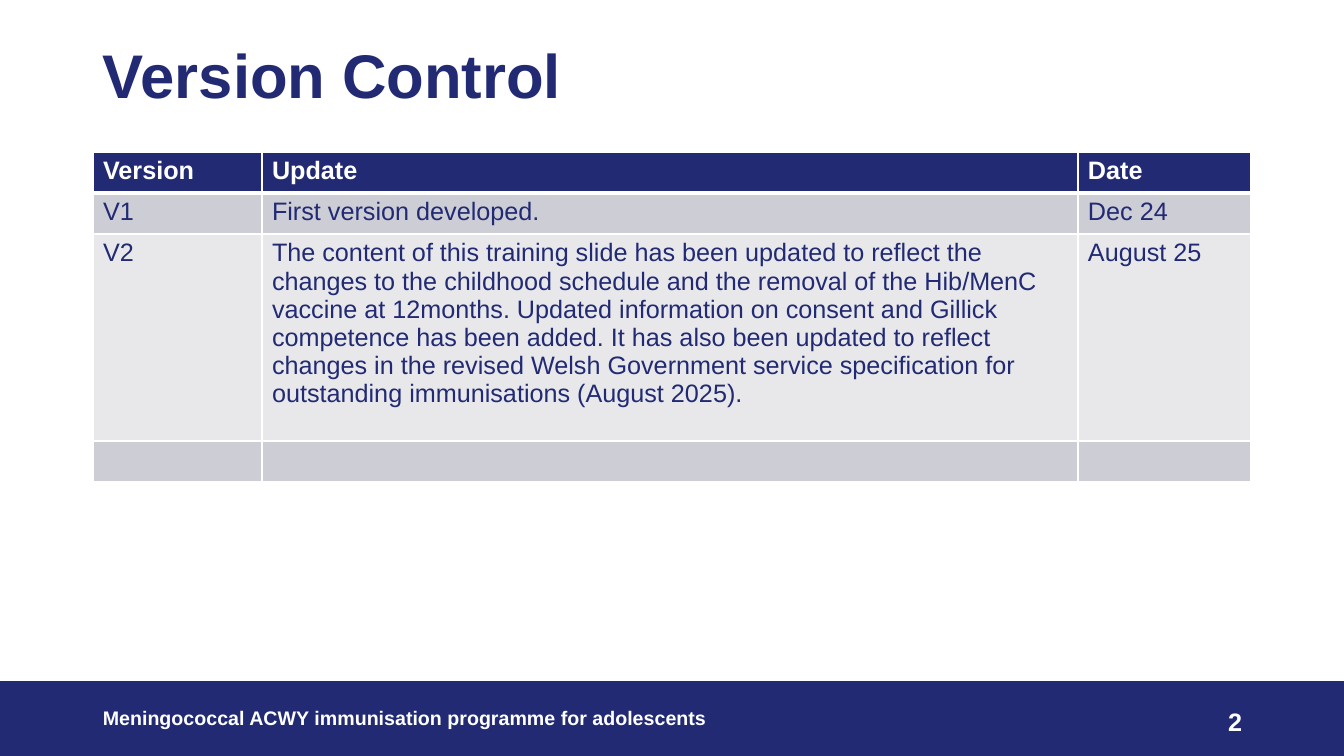
from dataclasses import dataclass

from lxml import etree
from pptx import Presentation
from pptx import util as u
from pptx.dml.color import RGBColor
from pptx.enum import shapes, text
from pptx.oxml import ns

EMU_PER_PX = 12192000 / 1344
NAVY, WHITE, BAND_DARK, BAND_LIGHT = "212A73", "FFFFFF", "CDCDD5", "E8E8EB"


@dataclass
class Label:
    words: str
    left: int
    top: int
    width: int
    height: int
    size: int
    color: str
    align: text.PP_ALIGN = text.PP_ALIGN.LEFT
    spacing: float = 1.0


@dataclass
class Row:
    cells: tuple[str, str, str]
    height: int
    fill: str
    color: str = NAVY
    bold: bool = False
    rule_below: int = 1


COLUMN_WIDTHS = (169, 816, 173)
ROWS = [
    Row(("Version", "Update", "Date"), 41, NAVY, WHITE, True, 3),
    Row(("V1", "First version developed.", "Dec 24"), 41, BAND_DARK),
    Row(("V2",
         "The content of this training slide has been updated to reflect the "
         "changes to the childhood schedule and the removal of the Hib/MenC "
         "vaccine at 12months. Updated information on consent and Gillick "
         "competence has been added. It has also been updated to reflect "
         "changes in the revised Welsh Government service specification for "
         "outstanding immunisations (August 2025).",
         "August 25"), 207, BAND_LIGHT),
    Row(("", "", ""), 41, BAND_DARK),
]
LABELS = [
    Label("Version Control", 93, 40, 1159, 146, 44, NAVY, spacing=0.9),
    Label("Meningococcal ACWY immunisation programme for adolescents",
          93, 701, 806, 40, 14, WHITE),
    Label("2", 950, 701, 302, 40, 18, WHITE, text.PP_ALIGN.RIGHT),
]


def px(length: int) -> u.Emu:
    return u.Emu(round(length * EMU_PER_PX))


def rgb(color: str) -> RGBColor:
    return RGBColor.from_string(color)


def write(para, words: str, size: int, color: str, bold: bool) -> None:
    span = para.add_run()
    span.text = words
    formats = {"name": "Arial", "size": u.Pt(size), "bold": bold}
    for key, value in formats.items():
        setattr(span.font, key, value)
    span.font.color.rgb = rgb(color)


def add_label(page, label: Label) -> None:
    box = page.shapes.add_textbox(*map(px, (label.left, label.top, label.width, label.height)))
    frame = box.text_frame
    formats = {"word_wrap": True, "vertical_anchor": text.MSO_ANCHOR.TOP}
    for key, value in formats.items():
        setattr(frame, key, value)
    para = frame.paragraphs[0]
    para.alignment = label.align
    para.line_spacing = label.spacing
    write(para, label.words, label.size, label.color, True)


def set_borders(cell, widths: dict[str, int]) -> None:
    """Draw white cell borders; they must come before the fill in the XML."""
    properties = cell._tc.get_or_add_tcPr()
    for position, (side, width) in enumerate(widths.items()):
        line = etree.Element(ns.qn(f"a:ln{side}"), w=str(u.Pt(width)))
        fill = etree.SubElement(line, ns.qn("a:solidFill"))
        etree.SubElement(fill, ns.qn("a:srgbClr"), val=WHITE)
        properties.insert(position, line)


def add_version_table(page, left: int, top: int) -> None:
    height = sum(row.height for row in ROWS)
    frame = page.shapes.add_table(len(ROWS), len(COLUMN_WIDTHS), px(left), px(top),
                                  px(sum(COLUMN_WIDTHS)), px(height))
    table = frame.table
    for column, width in zip(table.columns, COLUMN_WIDTHS):
        column.width = px(width)
    rule_above = 1
    for index, row in enumerate(ROWS):
        table.rows[index].height = px(row.height)
        for cell, words in zip(table.rows[index].cells, row.cells):
            cell.fill.solid()
            cell.fill.fore_color.rgb = rgb(row.fill)
            set_borders(cell, {"L": 1, "R": 1, "T": rule_above, "B": row.rule_below})
            if words:
                write(cell.text_frame.paragraphs[0], words, 18, row.color, row.bold)
        rule_above = row.rule_below


def add_footer_band(page) -> None:
    band = page.shapes.add_shape(shapes.MSO_SHAPE.RECTANGLE, 0, px(682), px(1344), px(74))
    band.shadow.inherit = False
    band.fill.solid()
    band.fill.fore_color.rgb = rgb(NAVY)
    band.line.color.rgb = rgb(NAVY)
    band.line.width = u.Pt(1)


def main() -> None:
    deck = Presentation()
    deck.slide_width, deck.slide_height = px(1344), px(756)
    page = deck.slides.add_slide(deck.slide_layouts[6])

    # Footer band, then the title and footer texts
    add_footer_band(page)
    for label in LABELS:
        add_label(page, label)

    # Version history
    add_version_table(page, 93, 152)
    deck.save("out.pptx")


if __name__ == "__main__":
    main()
